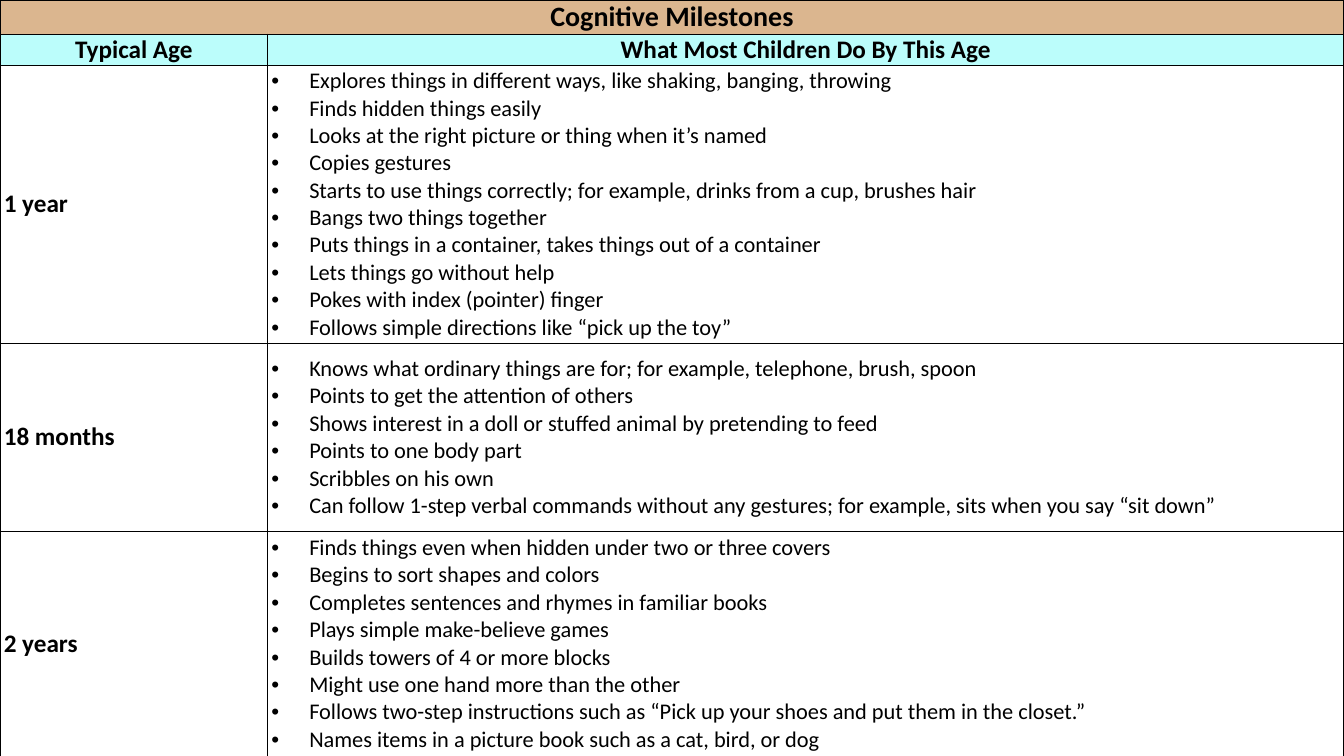
"""Build a slide with a table of cognitive milestones by age."""
import pptx
import pptx.util
import pptx.dml.color
import pptx.enum.text
import lxml.etree

Pt = pptx.util.Pt
Align = pptx.enum.text.PP_ALIGN
NS = "http://schemas.openxmlformats.org/drawingml/2006/main"

TITLE = "Cognitive Milestones"
HEADS = ("Typical Age", "What Most Children Do By This Age")
AGES = {
    "1 year": [
        "Explores things in different ways, like shaking, banging, throwing",
        "Finds hidden things easily",
        "Looks at the right picture or thing when it’s named",
        "Copies gestures",
        "Starts to use things correctly; for example, drinks from a cup, brushes hair",
        "Bangs two things together",
        "Puts things in a container, takes things out of a container",
        "Lets things go without help",
        "Pokes with index (pointer) finger",
        "Follows simple directions like “pick up the toy”",
    ],
    "18 months": [
        "Knows what ordinary things are for; for example, telephone, brush, spoon",
        "Points to get the attention of others",
        "Shows interest in a doll or stuffed animal by pretending to feed",
        "Points to one body part",
        "Scribbles on his own",
        "Can follow 1-step verbal commands without any gestures; "
        "for example, sits when you say “sit down”",
    ],
    "2 years": [
        "Finds things even when hidden under two or three covers",
        "Begins to sort shapes and colors",
        "Completes sentences and rhymes in familiar books",
        "Plays simple make-believe games",
        "Builds towers of 4 or more blocks",
        "Might use one hand more than the other",
        "Follows two-step instructions such as “Pick up your shoes and put them in the closet.”",
        "Names items in a picture book such as a cat, bird, or dog",
    ],
}
WIDE, HIGH = 960, 540
COLS = (191.2, 768.8)
ROWS = (24.4, 22, 198.7, 134.4, 160.5)
INDENT = 27
TAN, AQUA, BLACK = "DBB68F", "BBFDFB", "000000"


def color(code):
    return pptx.dml.color.RGBColor.from_string(code)


def add(node, tag, **attrs):
    return lxml.etree.SubElement(node, f"{{{NS}}}{tag}", **attrs)


def border(cell):
    props = cell._tc.get_or_add_tcPr()
    for side in ("lnL", "lnR", "lnT", "lnB"):
        line = add(props, side, w=str(Pt(1)))
        add(add(line, "solidFill"), "srgbClr", val=BLACK)


def bullet(para):
    props = para._p.get_or_add_pPr()
    props.set("marL", str(Pt(INDENT)))
    props.set("indent", str(-Pt(INDENT)))
    add(props, "buFont", typeface="Arial")
    add(props, "buChar", char="•")


def write(cell, lines, size, fill=None, listed=False):
    cell.vertical_anchor = pptx.enum.text.MSO_ANCHOR.MIDDLE
    cell.margin_left = cell.margin_right = Pt(2.7)
    cell.margin_top = cell.margin_bottom = 0
    if fill:
        cell.fill.solid()
        cell.fill.fore_color.rgb = color(fill)
    else:
        cell.fill.background()
    cell.text_frame.text = "\n".join(lines)
    for para in cell.text_frame.paragraphs:
        para.alignment = Align.CENTER if fill else Align.LEFT
        para.space_after = Pt(0 if listed else 10)
        if listed:
            bullet(para)
        for run in para.runs:
            run.font.name = "Calibri"
            run.font.size = Pt(size)
            run.font.bold = not listed
            run.font.color.rgb = color(BLACK)


def main():
    deck = pptx.Presentation()
    deck.slide_width, deck.slide_height = Pt(WIDE), Pt(HIGH)
    slide = deck.slides.add_slide(deck.slide_layouts[6])
    frame = slide.shapes.add_table(len(ROWS), len(COLS), 0, 0, Pt(WIDE), Pt(HIGH))
    table = frame.table
    table.first_row = table.horz_banding = False
    for col, width in zip(table.columns, COLS):
        col.width = Pt(width)
    for row, height in zip(table.rows, ROWS):
        row.height = Pt(height)
    for cell in table.iter_cells():
        border(cell)

    table.cell(0, 0).merge(table.cell(0, 1))
    write(table.cell(0, 0), [TITLE], 20, TAN)
    for col, head in enumerate(HEADS):
        write(table.cell(1, col), [head], 18, AQUA)
    for row, (age, skills) in enumerate(AGES.items(), 2):
        write(table.cell(row, 0), [age], 18)
        write(table.cell(row, 1), skills, 16, listed=True)
    deck.save("out.pptx")


if __name__ == "__main__":
    main()
